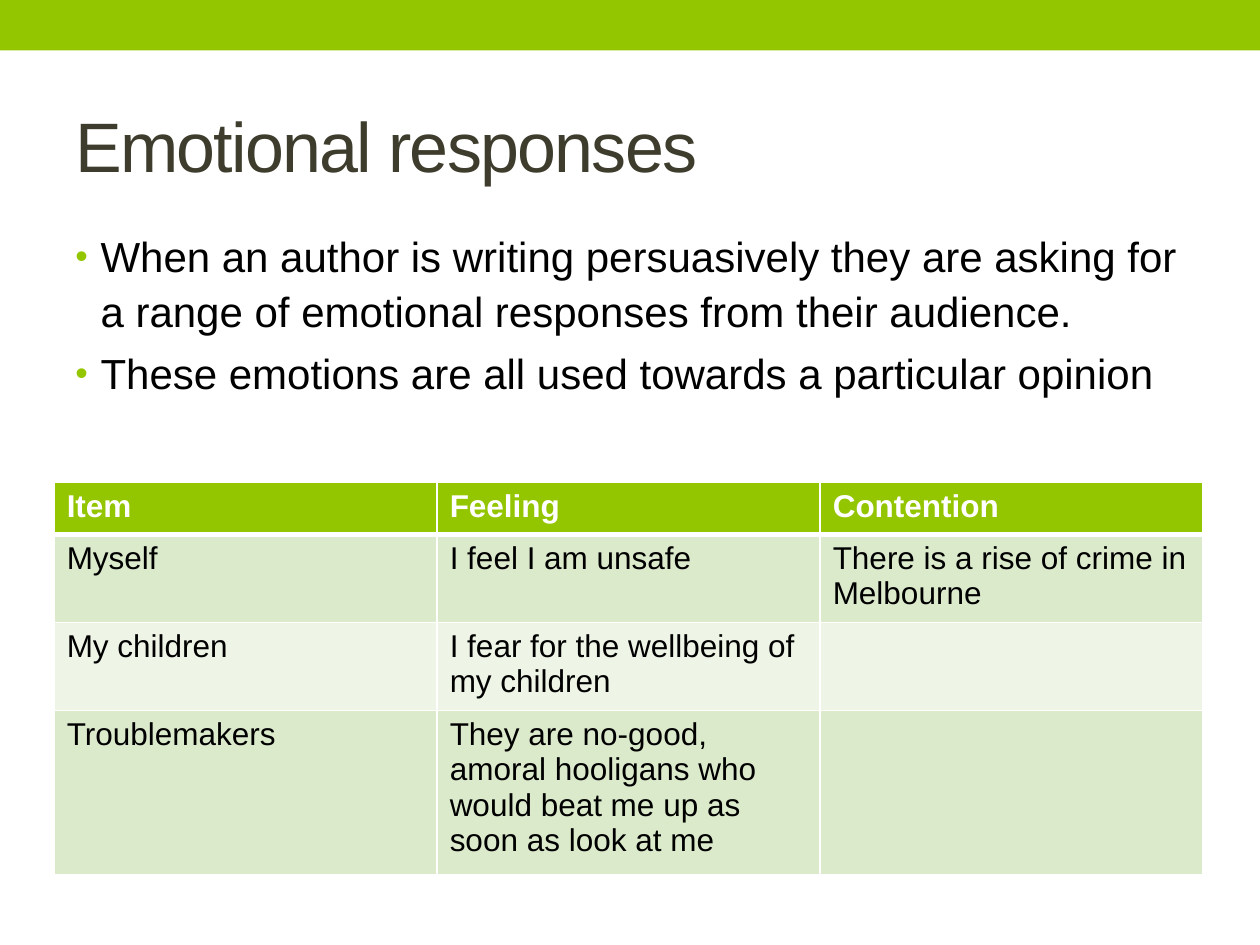
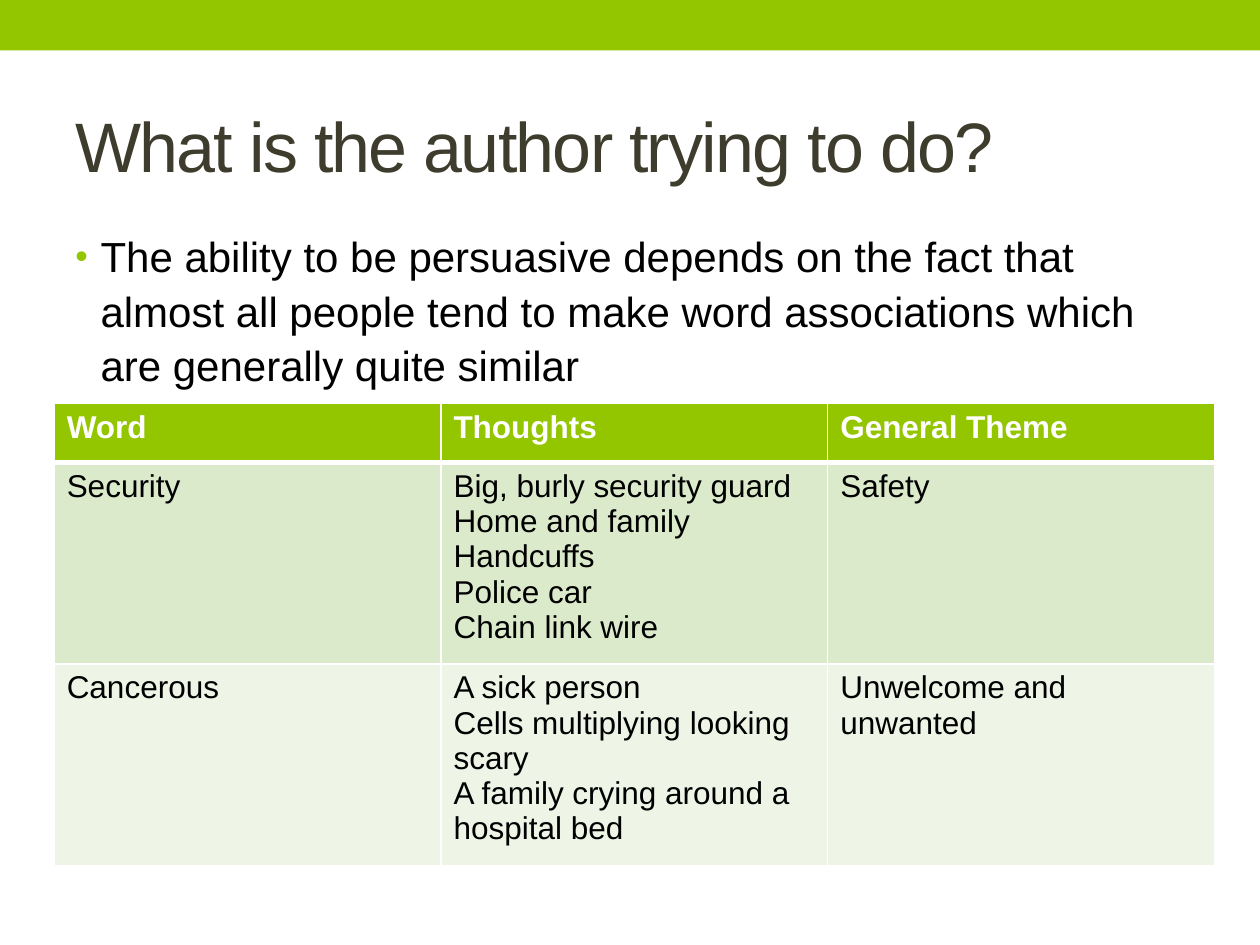
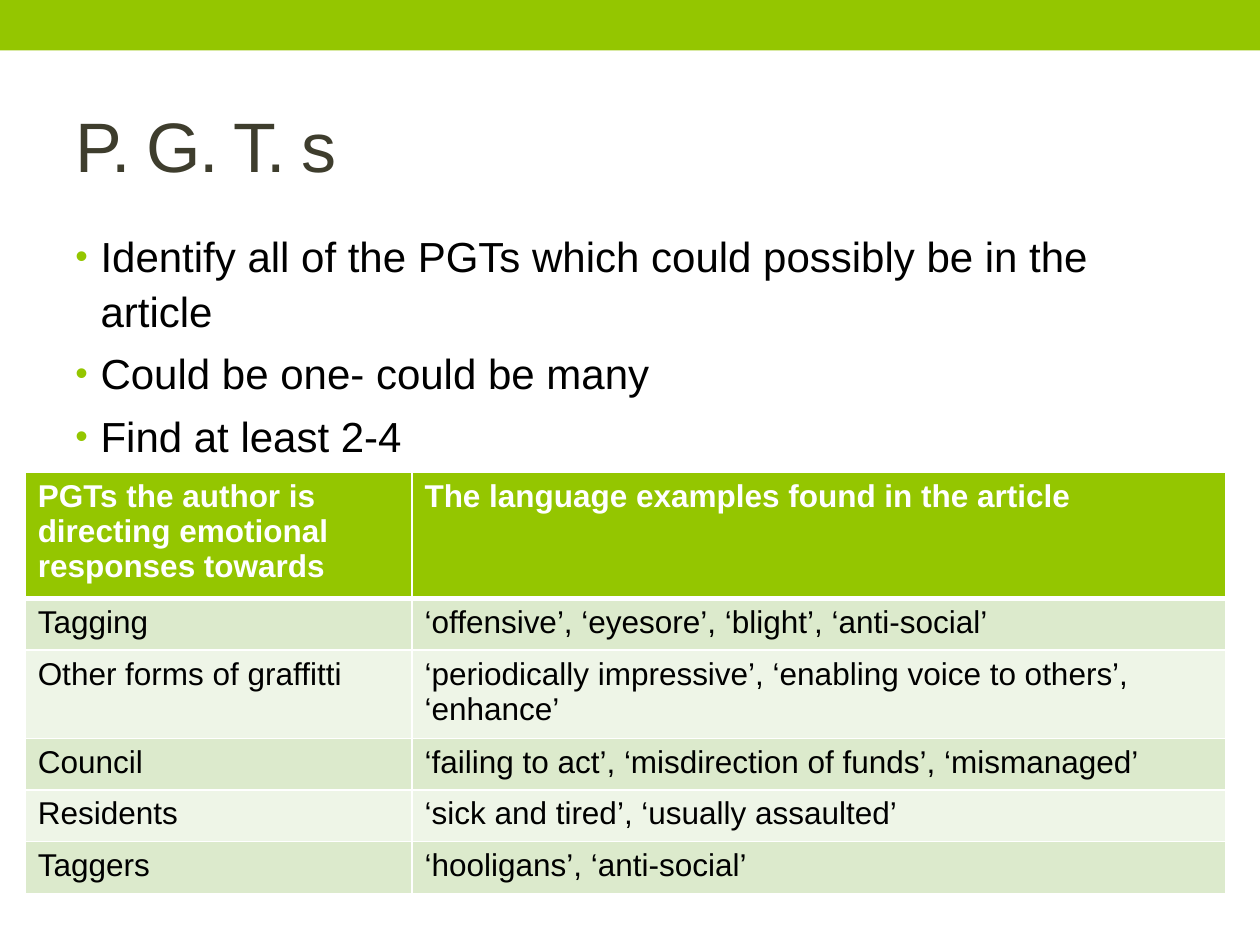
"""Build three slides on persuasive language, each with bullets and a table."""
import lxml.etree
import pptx
import pptx.dml.color
import pptx.enum.shapes
import pptx.enum.text
import pptx.oxml.ns
import pptx.util

Inches = pptx.util.Inches
Pt = pptx.util.Pt
COLORS = {
    "accent": "94C600",
    "title": "3E3D2D",
    "text": "000000",
    "white": "FFFFFF",
    "odd_row": "DCEACC",
    "even_row": "EEF5E7",
}
FONT = "Arial"


def rgb(color):
    """Return the named colour."""
    return pptx.dml.color.RGBColor.from_string(COLORS[color])


def add_xml(parent, tag, **attributes):
    """Append a drawing element and return it."""
    name = pptx.oxml.ns.qn(f"a:{tag}")
    return lxml.etree.SubElement(parent, name, attributes)


def write(frame, lines, size=18, color="text", bold=False, tracking=None,
          line_spacing=None, space_before=None, bullet=False):
    """Fill a text frame with one formatted paragraph per line."""
    frame.word_wrap = True
    for index, line in enumerate(lines):
        paragraph = frame.add_paragraph() if index else frame.paragraphs[0]
        if line_spacing:
            paragraph.line_spacing = line_spacing
        if space_before:
            paragraph.space_before = Pt(space_before)
        if bullet:
            add_bullet(paragraph)
        run = paragraph.add_run()
        run.text = line
        run.font.name = FONT
        run.font.size = Pt(size)
        run.font.bold = bold
        run.font.color.rgb = rgb(color)
        if tracking:
            run.font._element.set("spc", str(tracking * 100))


def add_bullet(paragraph):
    """Give a paragraph a hanging green bullet."""
    properties = paragraph._p.get_or_add_pPr()
    indent = Inches(0.2)
    properties.set("marL", str(indent))
    properties.set("indent", str(-indent))
    add_xml(add_xml(properties, "buClr"), "srgbClr", val=COLORS["accent"])
    add_xml(properties, "buSzPct", val="85000")
    add_xml(properties, "buFont", typeface=FONT)
    add_xml(properties, "buChar", char="•")


def add_borders(cell, top, bottom):
    """Draw white borders around a cell, with widths in points."""
    properties = cell._tc.get_or_add_tcPr()
    for side, width in zip("LRTB", (1, 1, top, bottom)):
        line = add_xml(properties, f"ln{side}", w=str(Pt(width)))
        add_xml(add_xml(line, "solidFill"), "srgbClr", val=COLORS["white"])


class Deck:
    """Hold the shared style and the current slide."""

    def __init__(self):
        """Start an empty presentation."""
        self.presentation = pptx.Presentation()
        self.presentation.slide_width = Inches(10)
        self.presentation.slide_height = Inches(7.5)
        self.slide = None

    def start_slide(self, title, points):
        """Add a slide with its band, title and bullet points."""
        blank = self.presentation.slide_layouts[6]
        self.slide = self.presentation.slides.add_slide(blank)
        self.band()
        self.text(0.58, 1.08, [title], anchor="MIDDLE", size=40,
                  color="title", tracking=-1, line_spacing=1.08)
        self.text(1.75, 5.33, points, size=24, line_spacing=1.08,
                  space_before=4.8, bullet=True)

    def band(self):
        """Draw the green band along the top edge."""
        band = self.slide.shapes.add_shape(
            pptx.enum.shapes.MSO_SHAPE.RECTANGLE, 0, 0, Inches(10), Inches(0.4))
        band.shadow.inherit = False
        band.fill.solid()
        band.fill.fore_color.rgb = rgb("accent")
        band.line.fill.background()

    def text(self, top, height, lines, anchor="TOP", **style):
        """Add a text box that spans the content width."""
        box = self.slide.shapes.add_textbox(
            Inches(0.5), Inches(top), Inches(9), Inches(height))
        box.text_frame.vertical_anchor = pptx.enum.text.MSO_ANCHOR[anchor]
        write(box.text_frame, lines, **style)

    def table(self, left, top, widths, row_height, rows):
        """Add a table with a green header and banded rows."""
        table = self.slide.shapes.add_table(
            len(rows), len(widths), Inches(left), Inches(top),
            Inches(sum(widths)), Inches(row_height * len(rows))).table
        for column, width in zip(table.columns, widths):
            column.width = Inches(width)
        for r, row in enumerate(rows):
            header = r == 0
            fill = "accent" if header else "odd_row" if r % 2 else "even_row"
            for c, content in enumerate(row):
                cell = table.cell(r, c)
                add_borders(cell, top=3 if r == 1 else 1, bottom=3 if header else 1)
                cell.fill.solid()
                cell.fill.fore_color.rgb = rgb(fill)
                if content:
                    write(cell.text_frame, content.split("\n"), bold=header,
                          color="white" if header else "text")


def main():
    """Build and save the slides."""
    deck = Deck()

    deck.start_slide("Emotional responses", [
        "When an author is writing persuasively they are asking for a range of "
        "emotional responses from their audience.",
        "These emotions are all used towards a particular opinion",
    ])
    deck.table(0.43, 3.83, [3.04] * 3, 0.41, [
        ("Item", "Feeling", "Contention"),
        ("Myself", "I feel I am unsafe", "There is a rise of crime in Melbourne"),
        ("My children", "I fear for the wellbeing of my children", ""),
        ("Troublemakers", "They are no-good, amoral hooligans who would beat me "
         "up as soon as look at me", ""),
    ])

    deck.start_slide("What is the author trying to do?", [
        "The ability to be persuasive depends on the fact that almost all people "
        "tend to make word associations which are generally quite similar",
    ])
    deck.table(0.43, 3.2, [3.07] * 3, 0.47, [
        ("Word", "Thoughts", "General Theme"),
        ("Security", "Big, burly security guard\nHome and family\nHandcuffs\n"
         "Police car\nChain link wire", "Safety"),
        ("Cancerous", "A sick person\nCells multiplying looking scary\n"
         "A family crying around a hospital bed", "Unwelcome and unwanted"),
    ])

    deck.start_slide("P. G. T. s", [
        "Identify all of the PGTs which could possibly be in the article",
        "Could be one- could be many",
        "Find at least 2-4",
    ])
    deck.table(0.2, 3.75, [3.07, 6.46], 0.41, [
        ("PGTs the author is directing emotional responses towards",
         "The language examples found in the article"),
        ("Tagging", "‘offensive’, ‘eyesore’, ‘blight’, ‘anti-social’"),
        ("Other forms of graffitti",
         "‘periodically impressive’, ‘enabling voice to others’, ‘enhance’"),
        ("Council", "‘failing to act’, ‘misdirection of funds’, ‘mismanaged’"),
        ("Residents", "‘sick and tired’, ‘usually assaulted’"),
        ("Taggers", "‘hooligans’, ‘anti-social’"),
    ])

    deck.presentation.save("out.pptx")


if __name__ == "__main__":
    main()
